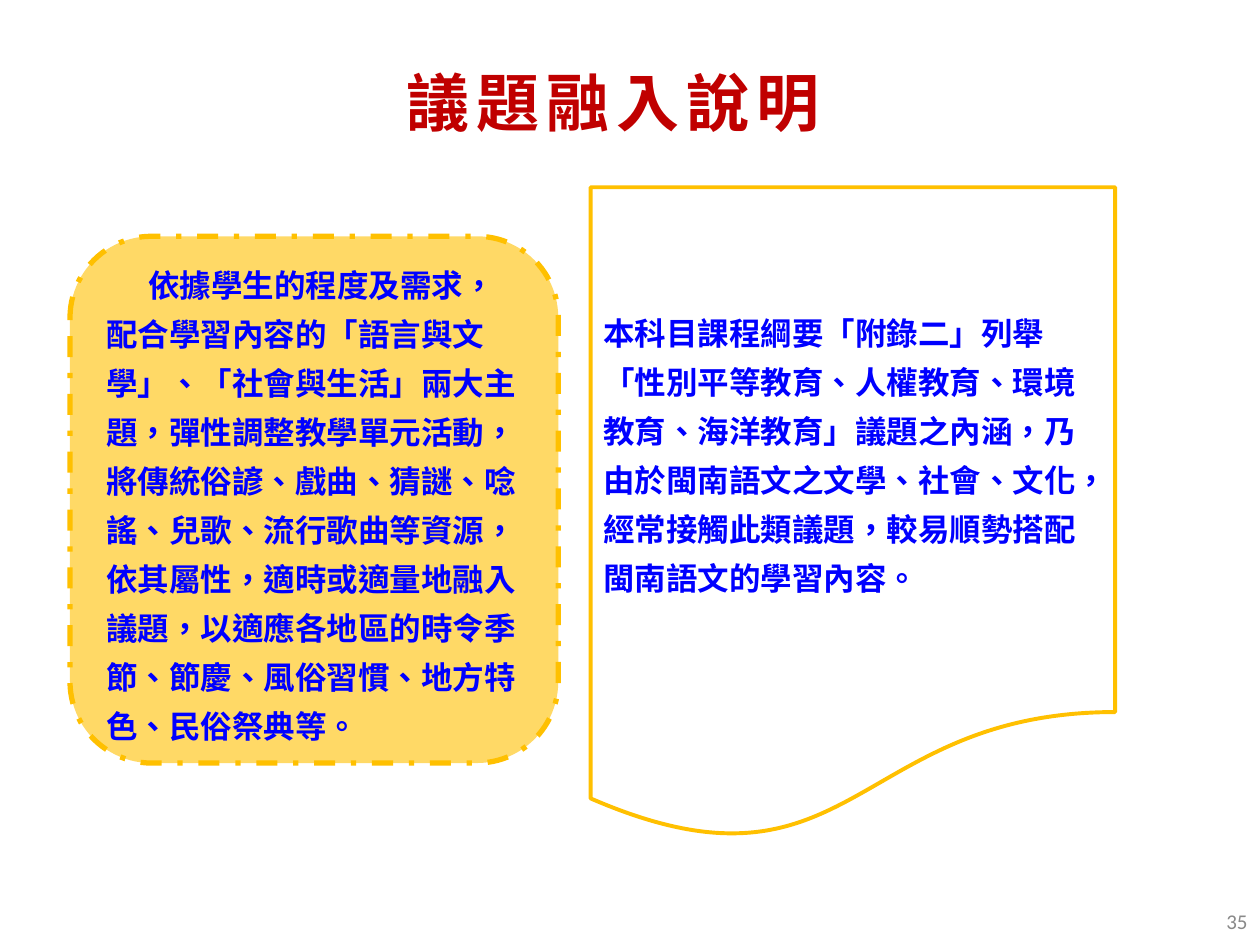
from pptx import Presentation
from pptx.dml.color import RGBColor
from pptx.enum.dml import MSO_LINE
from pptx.enum.shapes import MSO_SHAPE as Shape
from pptx.enum.text import MSO_ANCHOR as Anchor, PP_ALIGN as Align
from pptx.oxml.ns import qn
from pptx.util import Pt
from lxml.etree import SubElement

COLORS = {"title": "C00000", "body": "0000FF", "number": "898989",
          "gold": "FFC000", "panel": "FFD966", "white": "FFFFFF"}
CJK_FONT = "Noto Sans CJK SC"
PRACTICE = ("依據學生的程度及需求，配合學習內容的「語言與文學」、「社會與生活」兩大主題，"
            "彈性調整教學單元活動，將傳統俗諺、戲曲、猜謎、唸謠、兒歌、流行歌曲等資源，"
            "依其屬性，適時或適量地融入議題，以適應各地區的時令季節、節慶、風俗習慣、"
            "地方特色、民俗祭典等。")
ISSUES = ("本科目課程綱要「附錄二」列舉「性別平等教育、人權教育、環境教育、海洋教育」"
          "議題之內涵，乃由於閩南語文之文學、社會、文化，經常接觸此類議題，"
          "較易順勢搭配閩南語文的學習內容。")


def color(name):
    """Return the named palette colour."""
    return RGBColor.from_string(COLORS[name])


def write(shape, text, size, color_name, font_name, align, bold=True, spacing=0):
    """Fill a shape with one formatted paragraph and return it."""
    frame = shape.text_frame
    frame.text = text
    frame.word_wrap = True
    frame.vertical_anchor = Anchor.MIDDLE
    paragraph = frame.paragraphs[0]
    paragraph.alignment = align
    run = paragraph.runs[0]
    run.font.size = Pt(size)
    run.font.bold = bold
    run.font.name = font_name
    run.font.color.rgb = color(color_name)
    properties = run._r.get_or_add_rPr()
    properties.set("lang", "zh-TW")
    if spacing:
        properties.set("spc", str(spacing * 100))
    SubElement(properties, qn("a:ea")).set("typeface", CJK_FONT)
    return paragraph


def add_title(slide, text):
    """Place and format the title placeholder."""
    title = slide.shapes.title
    title.left, title.top, title.width, title.height = Pt(40), Pt(19.5), Pt(621), Pt(77)
    write(title, text, 36, "title", CJK_FONT, Align.CENTER, spacing=4)


def add_panel(slide, kind, box, fill, line_width, text, font_name, dash=None, indent=0):
    """Add an outlined panel of body text."""
    shape = slide.shapes.add_shape(kind, *map(Pt, box))
    shape.shadow.inherit = False
    shape.fill.solid()
    shape.fill.fore_color.rgb = color(fill)
    shape.line.color.rgb = color("gold")
    shape.line.width = Pt(line_width)
    if dash:
        shape.line.dash_style = dash
    paragraph = write(shape, text, 18, "body", font_name, Align.LEFT)
    paragraph.line_spacing = Pt(28)
    if indent:
        paragraph._p.get_or_add_pPr().set("indent", str(Pt(indent)))


def add_slide_number(slide, number):
    """Add the page number at the lower right."""
    box = slide.shapes.add_textbox(Pt(558), Pt(512), Pt(162), Pt(28.75))
    write(box, number, 12, "number", "Calibri", Align.RIGHT, bold=False)


def main():
    """Build and save the slide."""
    presentation = Presentation()
    presentation.slide_width, presentation.slide_height = Pt(720), Pt(540)
    slide = presentation.slides.add_slide(presentation.slide_layouts[5])
    add_title(slide, "議題融入說明")
    add_slide_number(slide, "35")
    add_panel(slide, Shape.FLOWCHART_ALTERNATE_PROCESS, (40, 135, 279, 301), "panel", 3,
              PRACTICE, CJK_FONT, MSO_LINE.DASH_DOT, indent=24)
    add_panel(slide, Shape.FLOWCHART_DOCUMENT, (337.5, 107, 299.75, 374), "white", 2.25,
              ISSUES, "Times New Roman")
    presentation.save("out.pptx")


if __name__ == "__main__":
    main()
